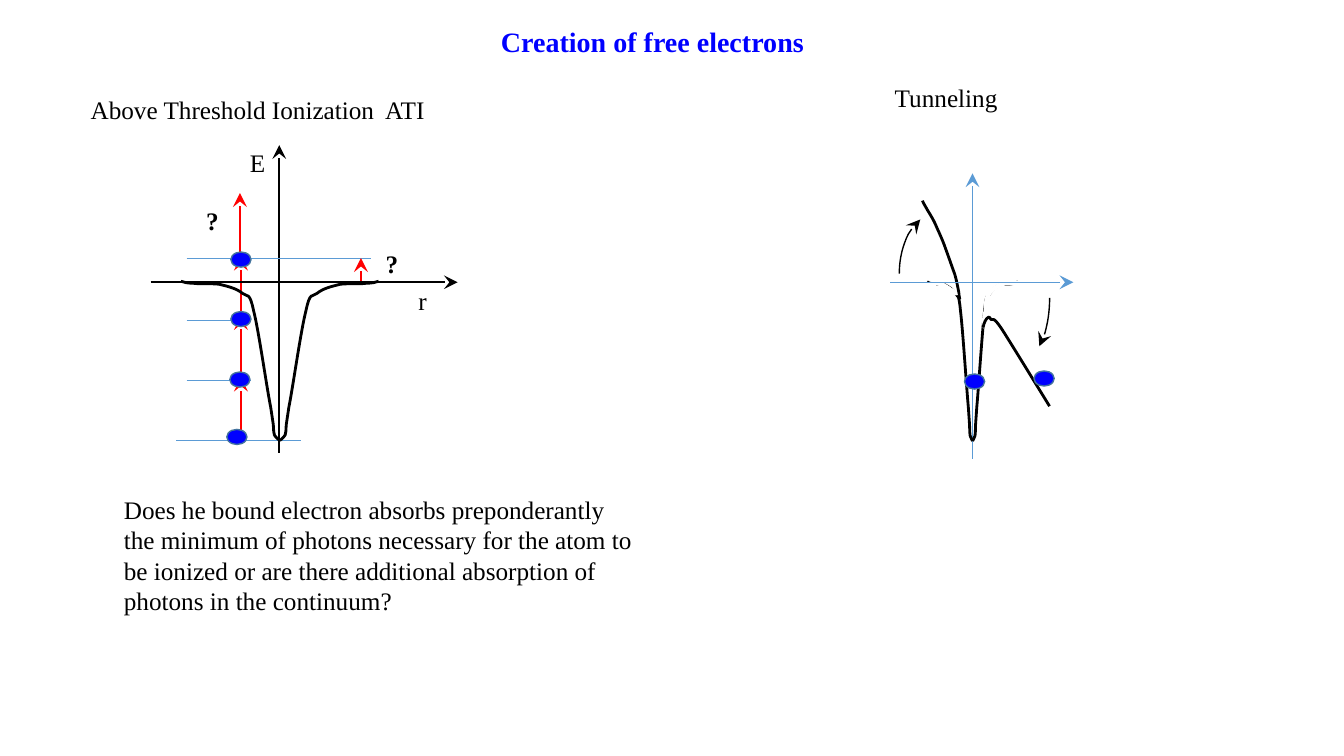
"""Build a slide comparing above-threshold ionization with tunneling."""
import pptx
import pptx.dml.color
import pptx.enum.shapes
import pptx.enum.text
import pptx.oxml.ns
import pptx.util
from lxml import etree

BLACK = pptx.dml.color.RGBColor(0x00, 0x00, 0x00)
WHITE = pptx.dml.color.RGBColor(0xFF, 0xFF, 0xFF)
BLUE = pptx.dml.color.RGBColor(0x00, 0x00, 0xFF)
RED = pptx.dml.color.RGBColor(0xFF, 0x00, 0x00)
LEVEL_BLUE = pptx.dml.color.RGBColor(0x5B, 0x9B, 0xD5)
RIM_BLUE = pptx.dml.color.RGBColor(0x43, 0x73, 0x9E)
SHAPE = pptx.enum.shapes.MSO_SHAPE
CELL = pptx.util.Inches(0.01)
STEALTH = {"type": "stealth", "w": "lg", "len": "lg"}

deck = pptx.Presentation()
deck.slide_width = 1333 * CELL
deck.slide_height = 750 * CELL
page = deck.slides.add_slide(deck.slide_layouts[6])


def add_text(text, column, row, columns, rows=40, size=18, color=BLACK, bold=False):
    box = page.shapes.add_textbox(*(round(place * CELL) for place in (column, row, columns, rows)))
    box.text_frame.word_wrap = True
    box.text_frame.auto_size = pptx.enum.text.MSO_AUTO_SIZE.SHAPE_TO_FIT_TEXT
    span = box.text_frame.paragraphs[0].add_run()
    span.text = text
    span.font.name = "Times New Roman"
    span.font.size = pptx.util.Pt(size)
    span.font.bold = bold
    span.font.color.rgb = color


def add_line(start, end, color=LEVEL_BLUE, width=0.5, arrow=False):
    line = page.shapes.add_connector(
        pptx.enum.shapes.MSO_CONNECTOR.STRAIGHT, *(round(place * CELL) for place in start + end))
    line.line.color.rgb = color
    line.line.width = pptx.util.Pt(width)
    etree.SubElement(line._element.spPr, pptx.oxml.ns.qn("a:effectLst"))
    if arrow:
        etree.SubElement(line.line._get_or_add_ln(), pptx.oxml.ns.qn("a:tailEnd"), STEALTH)


add_text("Creation of free electrons", 487, 19, 358, rows=44, size=20, color=BLUE, bold=True)
add_text("Above Threshold Ionization  ATI", 80, 88.4, 445)
add_text("Tunneling", 877.6, 77, 266)
add_text("E", 238, 141, 48)
add_text("r", 405, 278, 48)
add_text("?", 372.6, 241, 33, bold=True)
add_text("?", 194.6, 199, 33, bold=True)
add_text(
    "Does he bound electron absorbs preponderantly the minimum of photons necessary "
    "for the atom to be ionized or are there additional absorption of photons in the continuum?",
    113, 485.6, 525, rows=131)

add_line((277, 449), (277, 144), BLACK, 1.5, arrow=True)
for column, photon_row in ((239, 438), (239, 377), (239, 318), (238, 255)):
    add_line((column, photon_row), (column, photon_row - 63.5), RED, 2, arrow=True)
for left, right, level_row in ((175, 299, 437), (185, 249, 377), (185, 249, 318), (185, 368, 256)):
    add_line((left, level_row), (right, level_row))
add_line((358, 280), (358, 256), RED, 2, arrow=True)
add_line((964.6, 455), (964.6, 172), arrow=True)
for left, right in ((866, 929), (1006, 1049)):
    add_line((left, 281.5), (right, 281.5), BLACK, 2)

well_profile = [
    (98, 279), (95, 280), (92, 281), (86, 281), (80, 282), (68, 281), (60, 282),
    (52, 284), (43, 286), (37, 291), (32, 295), (30, 289), (26, 308),
    (21, 327), (13, 384), (9, 404), (6, 424), (6, 423), (6, 428),
    (5, 432), (6, 431), (5, 432), (4, 434), (0, 437), (0, 437)]
raised_barrier = [
    (915, 199), (915, 200), (918, 205), (918, 205), (920, 209), (925, 216), (928, 223),
    (931, 230), (935, 238), (938, 247), (941, 255), (944, 264), (947, 272),
    (949, 279), (950, 285), (951, 290), (951, 294), (952, 295), (952, 297)]
left_mask = [
    (861, 282), (861, 282), (921, 282), (921, 282), (932, 282), (926, 281), (928, 281),
    (931, 281), (934, 282), (936, 283), (938, 284), (939, 284), (941, 286),
    (942, 287), (946, 289), (947, 290), (948, 292), (948, 293), (948, 293)]
right_mask = [
    (1050, 282), (1050, 282), (1009, 281), (1009, 281), (1000, 281), (1000, 281), (997, 281),
    (993, 282), (990, 284), (988, 285), (986, 286), (984, 288), (982, 290),
    (981, 292), (979, 293), (979, 296), (978, 299), (978, 304), (978, 307),
    (977, 311), (976, 317), (976, 320), (976, 323), (976, 324), (977, 325)]
lowered_barrier = [
    (975, 325), (976, 320), (978, 316), (980, 315), (981, 313), (981, 315), (983, 317),
    (986, 319), (984, 312), (994, 327), (1003, 341), (1041, 403), (1041, 403)]

curves = [(raised_barrier, BLACK, 2)]
for center, stretch, drop in ((277.5, 1, 0), (964.6, 0.46, 0.5)):
    for side in (-1, 1):
        well = [(center + side * stretch * offset, row + drop) for offset, row in well_profile]
        curves.append((well, BLACK, 2))
curves += [(left_mask, WHITE, 3), (right_mask, WHITE, 3), (lowered_barrier, BLACK, 2)]

for controls, color, width in curves:
    vertices = [(column * CELL, row * CELL) for column, row in controls]
    builder = page.shapes.build_freeform(*vertices[0])
    builder.add_line_segments(vertices[1:], close=False)
    curve = builder.convert_to_shape()
    straights = list(curve._element.iter(pptx.oxml.ns.qn("a:lnTo")))
    outline = straights[0].getparent()
    for first in range(0, len(straights), 3):
        bend = etree.SubElement(outline, pptx.oxml.ns.qn("a:cubicBezTo"))
        for straight in straights[first:first + 3]:
            bend.append(straight[0])
            outline.remove(straight)
    curve.shadow.inherit = False
    curve.fill.background()
    curve.line.color.rgb = color
    curve.line.width = pptx.util.Pt(width)

for column, row, columns, flip in ((989, 235, 52, "flipV"), (892, 211, 77, "flipH")):
    swing = page.shapes.add_shape(SHAPE.ARC, column * CELL, row * CELL, columns * CELL, 121 * CELL)
    swing.adjustments[0] = 172.93
    swing.adjustments[1] = 0
    swing._element.spPr.xfrm.set(flip, "1")
    swing.shadow.inherit = False
    swing.fill.background()
    swing.line.color.rgb = BLACK
    swing.line.width = pptx.util.Pt(1)
    etree.SubElement(swing.line._get_or_add_ln(), pptx.oxml.ns.qn("a:headEnd"), STEALTH)

add_line((883, 280), (1064.6, 280), arrow=True)
add_line((149.4, 280), (454, 280), BLACK, 1.5, arrow=True)

for column, row in ((225, 426), (228, 369), (229, 309), (229, 250), (956.6, 371), (1025.6, 368)):
    electron = page.shapes.add_shape(
        SHAPE.OVAL, round(column * CELL), row * CELL, 20 * CELL, 15 * CELL)
    electron.shadow.inherit = False
    electron.fill.solid()
    electron.fill.fore_color.rgb = BLUE
    electron.line.color.rgb = RIM_BLUE
    electron.line.width = pptx.util.Pt(1)

deck.save("out.pptx")
